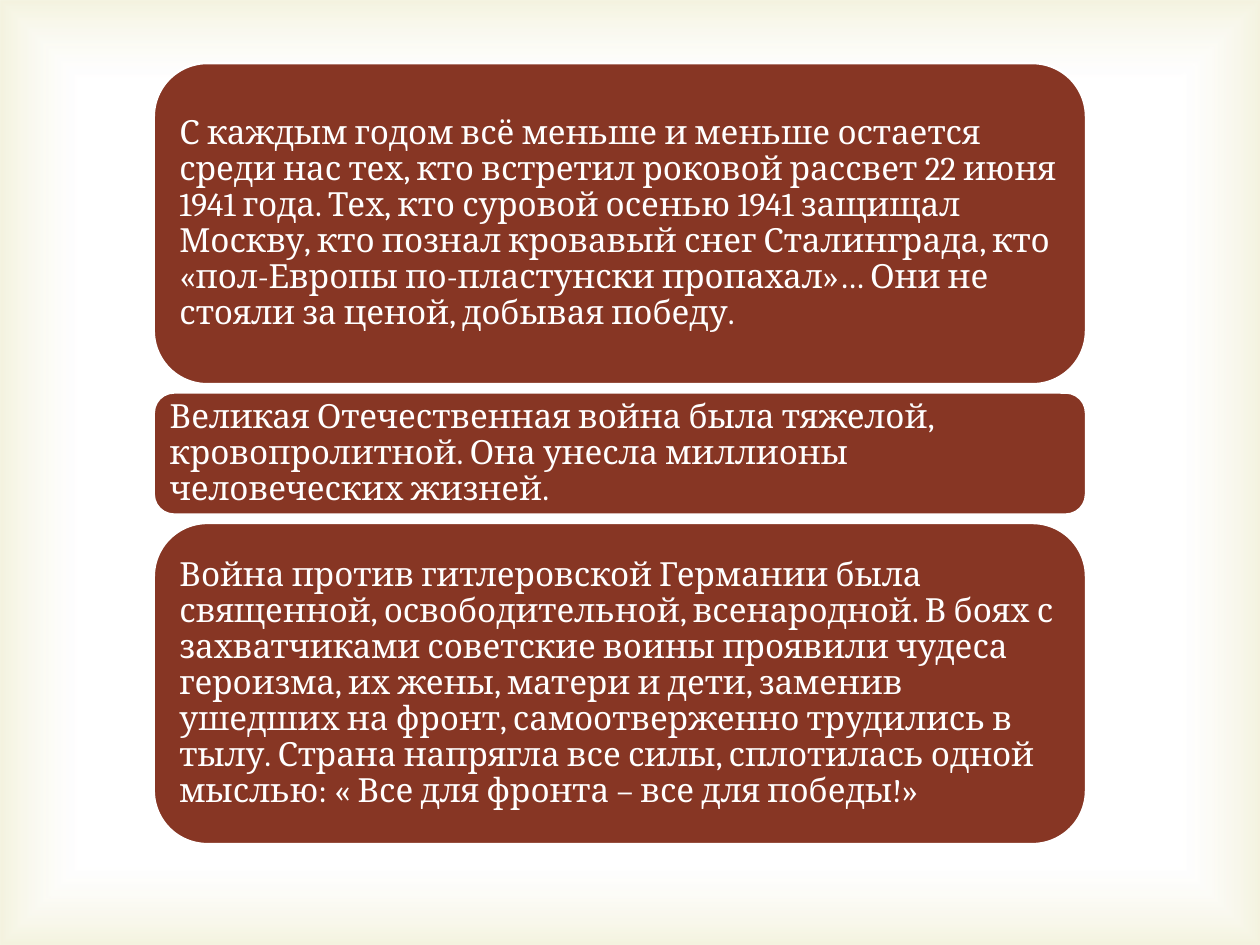
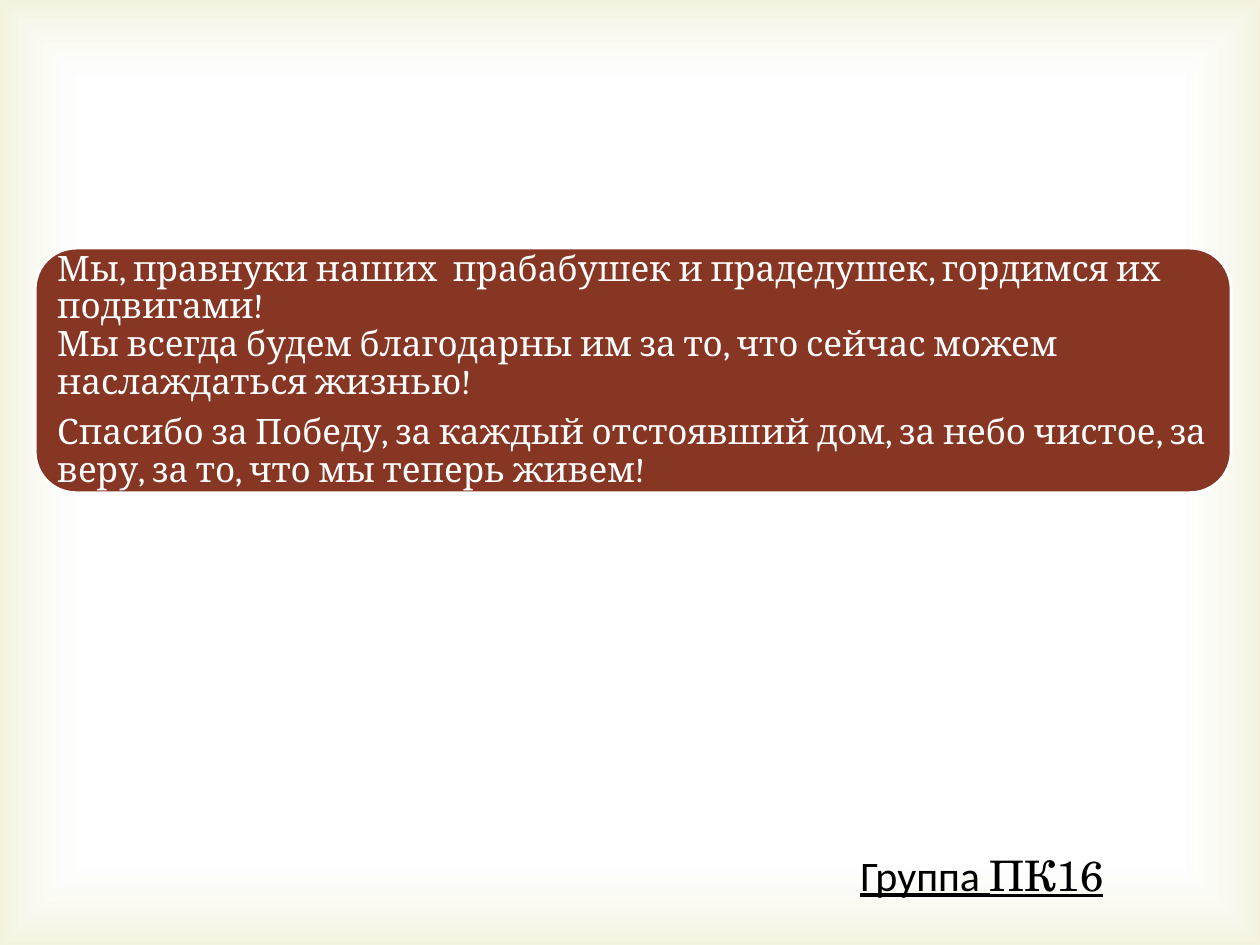
from dataclasses import dataclass

from lxml.etree import fromstring
from pptx import Presentation
from pptx.dml.color import RGBColor
from pptx.enum.shapes import MSO_SHAPE
from pptx.enum.text import MSO_ANCHOR, MSO_AUTO_SIZE, PP_ALIGN
from pptx.oxml.ns import qn
from pptx.slide import Slide, SlideLayout
from pptx.util import Inches, Pt

COLORS = {"paper": "FFFFFF", "glow": "D1CA75", "brick": "873624", "ink": "000000"}
PANEL_FONT = "Cambria"
SLIDE_WIDTH, SLIDE_HEIGHT = Inches(10), Inches(7.5)
COLUMNS, ROWS = 100, 75
PANEL_GAP = 0.65

GLOW_XML = f"""
<a:gradFill xmlns:a="http://schemas.openxmlformats.org/drawingml/2006/main" rotWithShape="1">
  <a:gsLst>
    <a:gs pos="83000"><a:srgbClr val="{COLORS['paper']}"><a:alpha val="11000"/></a:srgbClr></a:gs>
    <a:gs pos="100000"><a:srgbClr val="{COLORS['glow']}"><a:alpha val="23000"/></a:srgbClr></a:gs>
  </a:gsLst>
  <a:path path="rect"><a:fillToRect l="50000" t="50000" r="50000" b="50000"/></a:path>
</a:gradFill>"""


@dataclass(frozen=True)
class Area:
    """A rectangle in grid columns and rows."""

    column: float
    row: float
    columns: float
    rows: float

    def lengths(self) -> tuple[int, int, int, int]:
        """Return left, top, width and height on the slide."""
        across, down = SLIDE_WIDTH / COLUMNS, SLIDE_HEIGHT / ROWS
        return (round(self.column * across), round(self.row * down),
                round(self.columns * across), round(self.rows * down))


@dataclass(frozen=True)
class Panel:
    """A statement: its height in rows and its paragraphs, each a list of lines."""

    rows: float
    paragraphs: list[list[str]]


@dataclass(frozen=True)
class Stack:
    """Panels placed under one another on one slide."""

    column: float
    row: float
    columns: float
    text_size: int
    panels: list[Panel]


MEMORY = Stack(12.2, 5, 74, 19, [
    Panel(25.5, [[
        "С каждым годом всё меньше и меньше остается среди нас тех, кто встретил "
        "роковой рассвет 22 июня 1941 года. Тех, кто суровой осенью 1941 защищал "
        "Москву, кто познал кровавый снег Сталинграда, кто «пол-Европы "
        "по-пластунски пропахал»… Они не стояли за ценой, добывая победу."]]),
    Panel(9.7, [[
        "Великая Отечественная война была тяжелой, кровопролитной. "
        "Она унесла миллионы человеческих жизней."]]),
    Panel(25.5, [[
        "Война против гитлеровской Германии была священной, освободительной, "
        "всенародной. В боях с захватчиками советские воины проявили чудеса "
        "героизма, их жены, матери и дети, заменив ушедших на фронт, "
        "самоотверженно трудились в тылу. Страна напрягла все силы, сплотилась "
        "одной мыслью: « Все для фронта – все для победы!»"]]),
])

GRATITUDE = Stack(2.8, 19.7, 94.9, 20, [
    Panel(19.4, [
        ["Мы, правнуки наших  прабабушек и прадедушек, гордимся их подвигами! ",
         "Мы всегда будем благодарны им за то, что сейчас можем "
         "наслаждаться жизнью!"],
        ["Спасибо за Победу, за каждый отстоявший дом, за небо чистое, "
         "за веру, за то, что мы теперь живем!"],
    ]),
])

SIGNATURE_AREA = Area(67.3, 66.9, 25.2, 5)
SIGNATURE = [("Группа ", "Calibri"), ("ПК16", "TeX Gyre Schola")]


def add_text_run(paragraph, text: str, font: str, size: int, color: str, underline: bool = False) -> None:
    """Append one formatted run."""
    run = paragraph.add_run()
    run.text = text
    run.font.name = font
    run.font.size = Pt(size)
    run.font.underline = underline
    run.font.color.rgb = RGBColor.from_string(COLORS[color])


def add_glow(slide: Slide, layout: SlideLayout) -> None:
    """Put the soft edge on the layout that the slides share."""
    glow = slide.shapes.add_shape(MSO_SHAPE.RECTANGLE, *Area(0, 0, COLUMNS, ROWS).lengths())
    glow.shadow.inherit = False
    glow.line.fill.background()
    glow.fill.background()
    properties = glow.element.spPr
    properties.replace(properties.find(qn("a:noFill")), fromstring(GLOW_XML))
    glow.element.nvSpPr.cNvPr.set("id", "20")
    layout.shapes.element.append(glow.element)


def add_panel(slide: Slide, area: Area, panel: Panel, text_size: int) -> None:
    """Draw one rounded panel with its text."""
    card = slide.shapes.add_shape(MSO_SHAPE.ROUNDED_RECTANGLE, *area.lengths())
    card.shadow.inherit = False
    card.fill.solid()
    card.fill.fore_color.rgb = RGBColor.from_string(COLORS["brick"])
    card.line.color.rgb = RGBColor.from_string(COLORS["paper"])
    card.line.width = Pt(1.5)
    frame = card.text_frame
    frame.word_wrap = True
    frame.vertical_anchor = MSO_ANCHOR.MIDDLE
    frame.margin_left = frame.margin_right = Inches(0.08)
    frame.margin_top = frame.margin_bottom = Inches(0.08)
    for number, lines in enumerate(panel.paragraphs):
        paragraph = frame.add_paragraph() if number else frame.paragraphs[0]
        paragraph.alignment = PP_ALIGN.LEFT
        paragraph.line_spacing = 0.9
        paragraph.space_after = Pt(round(0.35 * text_size))
        for position, line in enumerate(lines):
            if position:
                paragraph.add_line_break()
            add_text_run(paragraph, line, PANEL_FONT, text_size, "paper")


def add_stack(slide: Slide, stack: Stack) -> None:
    """Draw panels from top to bottom with equal gaps."""
    row = stack.row
    for panel in stack.panels:
        add_panel(slide, Area(stack.column, row, stack.columns, panel.rows), panel, stack.text_size)
        row += panel.rows + PANEL_GAP


def add_signature(slide: Slide) -> None:
    """Write the underlined group name."""
    signature = slide.shapes.add_textbox(*SIGNATURE_AREA.lengths())
    frame = signature.text_frame
    frame.word_wrap = True
    frame.auto_size = MSO_AUTO_SIZE.SHAPE_TO_FIT_TEXT
    for text, font in SIGNATURE:
        add_text_run(frame.paragraphs[0], text, font, 24, "ink", underline=True)


def main() -> None:
    """Build and save the presentation."""
    deck = Presentation()
    deck.slide_width, deck.slide_height = SLIDE_WIDTH, SLIDE_HEIGHT
    blank = deck.slide_layouts.get_by_name("Blank")
    memory, gratitude = (deck.slides.add_slide(blank) for _ in range(2))
    add_glow(memory, blank)
    add_stack(memory, MEMORY)
    add_stack(gratitude, GRATITUDE)
    add_signature(gratitude)
    deck.save("out.pptx")


if __name__ == "__main__":
    main()
